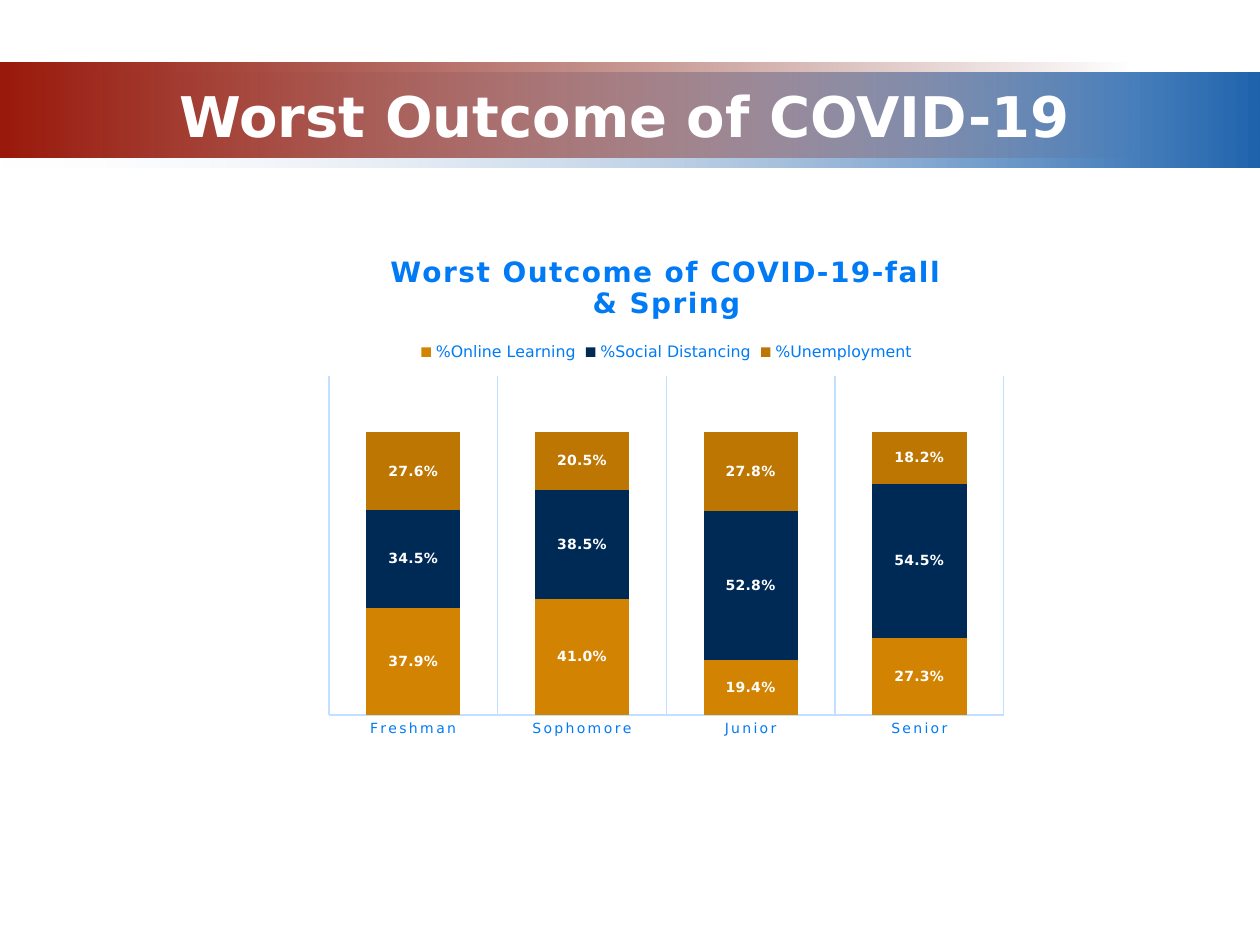
from lxml.etree import SubElement
from pptx import Presentation
from pptx.chart.data import CategoryChartData
from pptx.dml.color import RGBColor
from pptx.enum.chart import XL_CHART_TYPE, XL_LABEL_POSITION as LABEL_POS
from pptx.enum.chart import XL_LEGEND_POSITION as LEGEND_POS, XL_TICK_MARK as TICK
from pptx.enum.shapes import MSO_SHAPE
from pptx.enum.text import MSO_ANCHOR, MSO_AUTO_SIZE, PP_ALIGN
from pptx.oxml import parse_xml
from pptx.oxml.ns import nsdecls, qn
from pptx.util import Pt

FONT = "DejaVu Sans"


def px(*lengths):
    return [round(n * 914400 / 126) for n in lengths]


def style(font, size, color, bold=False):
    font.name = FONT
    font.size = Pt(size)
    font.bold = bold
    font.color.rgb = RGBColor.from_string(color)


prs = Presentation()
prs.slide_width, prs.slide_height = px(1260, 945)
s = prs.slides.add_slide(prs.slide_layouts[5])

bands = [
    ((0, 73, 1260, 95), ("F1F2F7", "1F63AD"), 0),
    ((0, 63, 1134, 95), ("99190B", "6D1208"), 1),
]
for box, colors, clear_stop in bands:
    sp = s.shapes.add_shape(MSO_SHAPE.RECTANGLE, *px(*box))
    sp.shadow.inherit = False
    sp.line.fill.background()
    sp.fill.gradient()
    sp.fill.gradient_angle = 0
    for stop, color, position in zip(sp.fill.gradient_stops, colors, (0, 1)):
        stop.color.rgb = RGBColor.from_string(color)
        stop.position = position
    clear = list(sp._element.spPr.iter(qn("a:srgbClr")))[clear_stop]
    SubElement(clear, qn("a:alpha"), val="0")

title = s.shapes.title
s.shapes._spTree.append(title._element)
title.left, title.top, title.width, title.height = px(116, 76, 1018, 78)
tf = title.text_frame
tf.word_wrap = True
tf.auto_size = MSO_AUTO_SIZE.NONE
tf.vertical_anchor = MSO_ANCHOR.MIDDLE
p = tf.paragraphs[0]
p.alignment = PP_ALIGN.CENTER
r = p.add_run()
r.text = "Worst Outcome of COVID-19"
style(r.font, 32, "FFFFFF", True)

series = [
    ("%Online Learning", (0.379, 0.41, 0.194, 0.273), "D28302"),
    ("%Social Distancing", (0.345, 0.385, 0.528, 0.545), "002A56"),
    ("%Unemployment", (0.276, 0.205, 0.278, 0.182), "BE7602"),
]
data = CategoryChartData(number_format="0.0%")
data.categories = ["Freshman", "Sophomore", "Junior", "Senior"]
for name, values, color in series:
    data.add_series(name, values)
chart = s.shapes.add_chart(
    XL_CHART_TYPE.COLUMN_STACKED, *px(315, 232, 703, 514), data
).chart
style(chart.font, 10, "003366")

chart.has_title = True
p = chart.chart_title.text_frame.paragraphs[0]
r = p.add_run()
r.text = "Worst Outcome of COVID-19-fall & Spring"
style(r.font, 16, "007AF5", True)
r.font._element.set("spc", "100")
chart.chart_title.include_in_layout = False

chart.has_legend = True
chart.legend.position = LEGEND_POS.TOP
chart.legend.include_in_layout = False
style(chart.legend.font, 9, "007AF5")

plot = chart.plots[0]
plot.gap_width = 79
plot.overlap = 100
plot.vary_by_categories = False
for ser, (name, values, color) in zip(plot.series, series):
    ser.format.fill.solid()
    ser.format.fill.fore_color.rgb = RGBColor.from_string(color)
    labels = ser.data_labels
    labels.show_value = True
    labels.number_format = "0.0%"
    labels.number_format_is_linked = False
    labels.position = LABEL_POS.CENTER
    style(labels.font, 8, "FFFFFF", True)

axis = chart.category_axis
axis.major_tick_mark = TICK.NONE
axis.has_major_gridlines = True
for line in (axis.format.line, axis.major_gridlines.format.line):
    line.width = Pt(0.75)
    line.color.rgb = RGBColor.from_string("C2E0FF")
style(axis.tick_labels.font, 8, "007AF5")
axis.tick_labels.font._element.set("spc", "120")

chart.value_axis.visible = False
chart.value_axis.has_major_gridlines = False
chart.value_axis.minimum_scale = 0
chart.value_axis.maximum_scale = 1.2

area = chart._chartSpace.chart.plotArea
for old in area.findall(qn("c:layout")):
    area.remove(old)
area.insert(0, parse_xml(
    f'<c:layout {nsdecls("c")}><c:manualLayout><c:layoutTarget val="inner"/>'
    '<c:xMode val="edge"/><c:yMode val="edge"/><c:x val="0.02"/><c:y val="0.28"/>'
    '<c:w val="0.96"/><c:h val="0.66"/></c:manualLayout></c:layout>'
))

prs.save("out.pptx")
